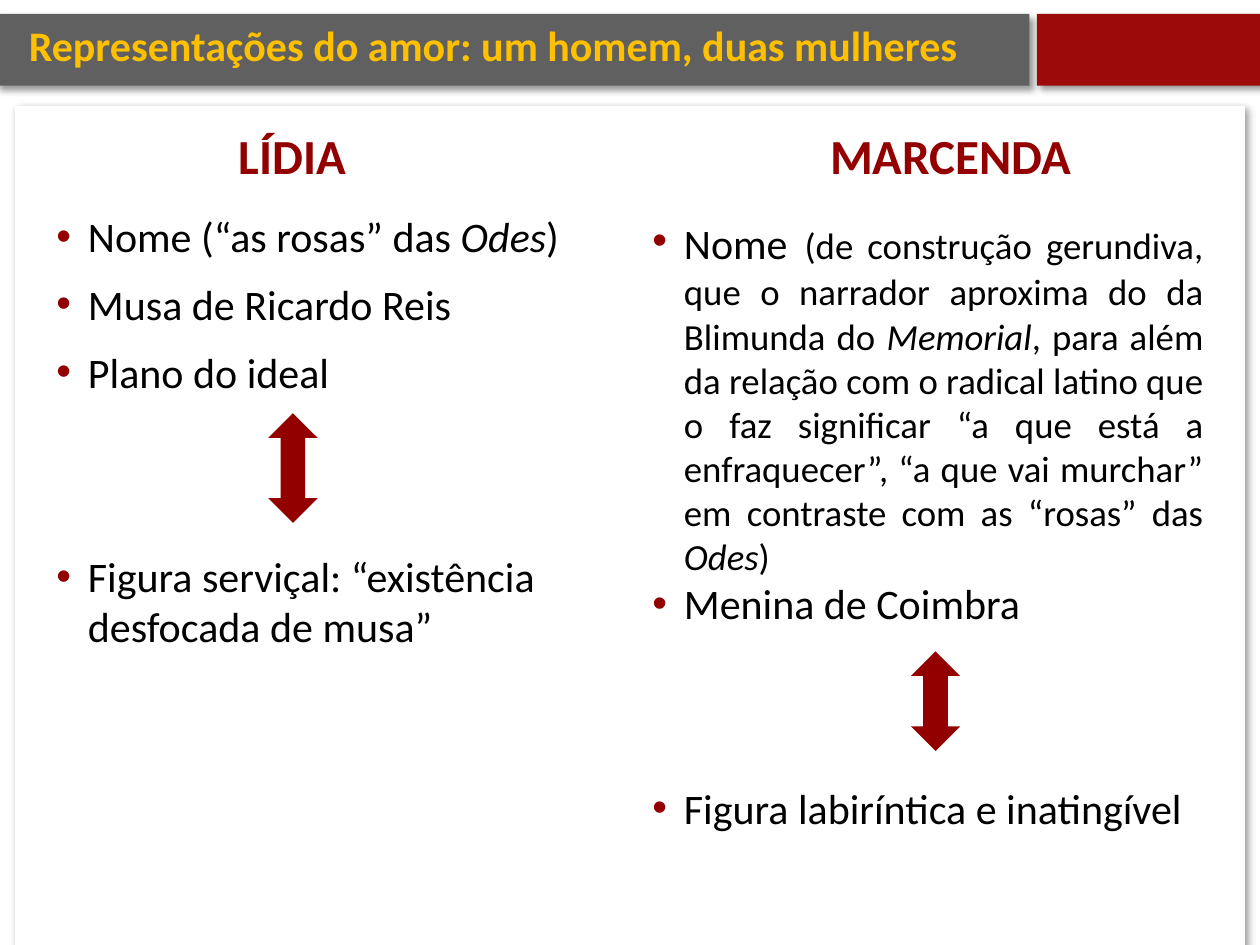
import pptx
import pptx.util
import pptx.dml.color
import pptx.enum.shapes
import pptx.enum.text
import pptx.oxml
import pptx.oxml.ns
import lxml.etree

Pt = pptx.util.Pt
SHAPE = pptx.enum.shapes.MSO_SHAPE
ALIGN = pptx.enum.text.PP_ALIGN
ANCHOR = pptx.enum.text.MSO_ANCHOR

COLORS = {"gray": "606060", "red": "9C0A0A", "crimson": "920000",
          "gold": "FFC000", "black": "000000", "white": "FFFFFF"}
COLS, ROWS = 100, 75
WIDTH, HEIGHT = pptx.util.Inches(10), pptx.util.Inches(7.5)
INDENT = pptx.util.Inches(0.25)
ARROW_GAP = 88  # space before the bullet that follows an arrow, in points


def rgb(name):
    return pptx.dml.color.RGBColor.from_string(COLORS[name])


def on_grid(left, top, cols, rows):
    """Turn grid columns and rows into slide lengths."""
    return (int(left * WIDTH / COLS), int(top * HEIGHT / ROWS),
            int(cols * WIDTH / COLS), int(rows * HEIGHT / ROWS))


def add_block(s, kind, box, color):
    sp = s.shapes.add_shape(kind, *on_grid(*box))
    sp.shadow.inherit = False
    sp.fill.solid()
    sp.fill.fore_color.rgb = rgb(color)
    sp.line.fill.background()
    return sp


def add_shadow(sp):
    effects = sp._element.spPr.find(pptx.oxml.ns.qn("a:effectLst"))
    effects.append(pptx.oxml.parse_xml(
        f'<a:outerShdw {pptx.oxml.ns.nsdecls("a")} blurRad="{Pt(4)}" '
        f'dist="{Pt(3)}" dir="2700000" algn="tl" rotWithShape="0">'
        f'<a:srgbClr val="{COLORS["black"]}"><a:alpha val="40000"/></a:srgbClr>'
        '</a:outerShdw>'))


def add_bullet(p):
    qn = pptx.oxml.ns.qn
    pPr = p._p.get_or_add_pPr()
    pPr.set("marL", str(INDENT))
    pPr.set("indent", str(-INDENT))
    color = lxml.etree.SubElement(pPr, qn("a:buClr"))
    lxml.etree.SubElement(color, qn("a:srgbClr"), val=COLORS["crimson"])
    lxml.etree.SubElement(pPr, qn("a:buFont"), typeface="Arial")
    lxml.etree.SubElement(pPr, qn("a:buChar"), char="•")


def add_text(s, box, paragraphs, size=24, color="black", bold=False, bullet=False,
             align=ALIGN.LEFT, anchor=ANCHOR.TOP, spacing=1.0):
    """Each paragraph is (space before, runs); a run is (text, own format)."""
    tf = s.shapes.add_textbox(*on_grid(*box)).text_frame
    tf.word_wrap = True
    tf.vertical_anchor = anchor
    for i, (before, runs) in enumerate(paragraphs):
        p = tf.add_paragraph() if i else tf.paragraphs[0]
        p.alignment = align
        p.line_spacing = spacing
        p.space_before = Pt(before)
        if bullet:
            add_bullet(p)
        for text, own in runs:
            r = p.add_run()
            r.text = text
            r.font.name = "Calibri"
            r.font.size = Pt(own.get("size", size))
            r.font.bold = bold
            r.font.italic = own.get("italic", False)
            r.font.color.rgb = rgb(color)


def add_frame(s):
    for box, color in (((-0.4, 1.1, 82.1, 5.7), "gray"),
                       ((82.3, 1.1, 18.1, 5.7), "red"),
                       ((1.2, 8.4, 97.6, 67.1), "white")):
        add_shadow(add_block(s, SHAPE.RECTANGLE, box, color))


def add_heading(s, box, text):
    add_text(s, box, [(0, [(text, {})])], size=28, color="crimson", bold=True,
             align=ALIGN.CENTER, spacing=0.9)


def main():
    prs = pptx.Presentation()
    prs.slide_width, prs.slide_height = WIDTH, HEIGHT
    s = prs.slides.add_slide(prs.slide_layouts[6])
    add_frame(s)
    add_text(s, (1.3, 0, 80.2, 7.6),
             [(0, [("Representações do amor: um homem, duas mulheres", {})])],
             color="gold", bold=True, anchor=ANCHOR.MIDDLE, spacing=0.9)

    italic, small = {"italic": True}, {"size": 21}
    small_italic = {**small, **italic}

    add_heading(s, (1.1, 10, 44.2, 7), "LÍDIA")
    add_text(s, (3.5, 16.2, 48.6, 40.2), [
        (0, [("Nome (“as rosas” das ", {}), ("Odes", italic), (")", {})]),
        (10, [("Musa de Ricardo Reis", {})]),
        (10, [("Plano do ideal", {})]),
        (ARROW_GAP, [("Figura serviçal: “existência desfocada de musa”", {})]),
    ], bullet=True)
    add_block(s, SHAPE.UP_DOWN_ARROW, (21.3, 32.8, 3.9, 8.7), "crimson")

    add_heading(s, (52.1, 10, 46.7, 7), "MARCENDA")
    add_text(s, (50.8, 16.2, 45.7, 55.9), [
        (0, [("Nome", {}), (" ", {"size": 28}),
             ("(de construção gerundiva, que o narrador aproxima do da "
              "Blimunda do ", small),
             ("Memorial", small_italic),
             (", para além da relação com o radical latino que o faz significar "
              "“a que está a enfraquecer”, “a que vai murchar” em contraste com "
              "as “rosas” das ", small),
             ("Odes", small_italic), (")", small)]),
        (0, [("Menina de Coimbra", {})]),
        (ARROW_GAP, [("Figura labiríntica e inatingível", {})]),
    ], bullet=True, align=ALIGN.JUSTIFY)
    add_block(s, SHAPE.UP_DOWN_ARROW, (72.3, 51.7, 3.9, 7.9), "crimson")

    prs.save("out.pptx")


if __name__ == "__main__":
    main()
